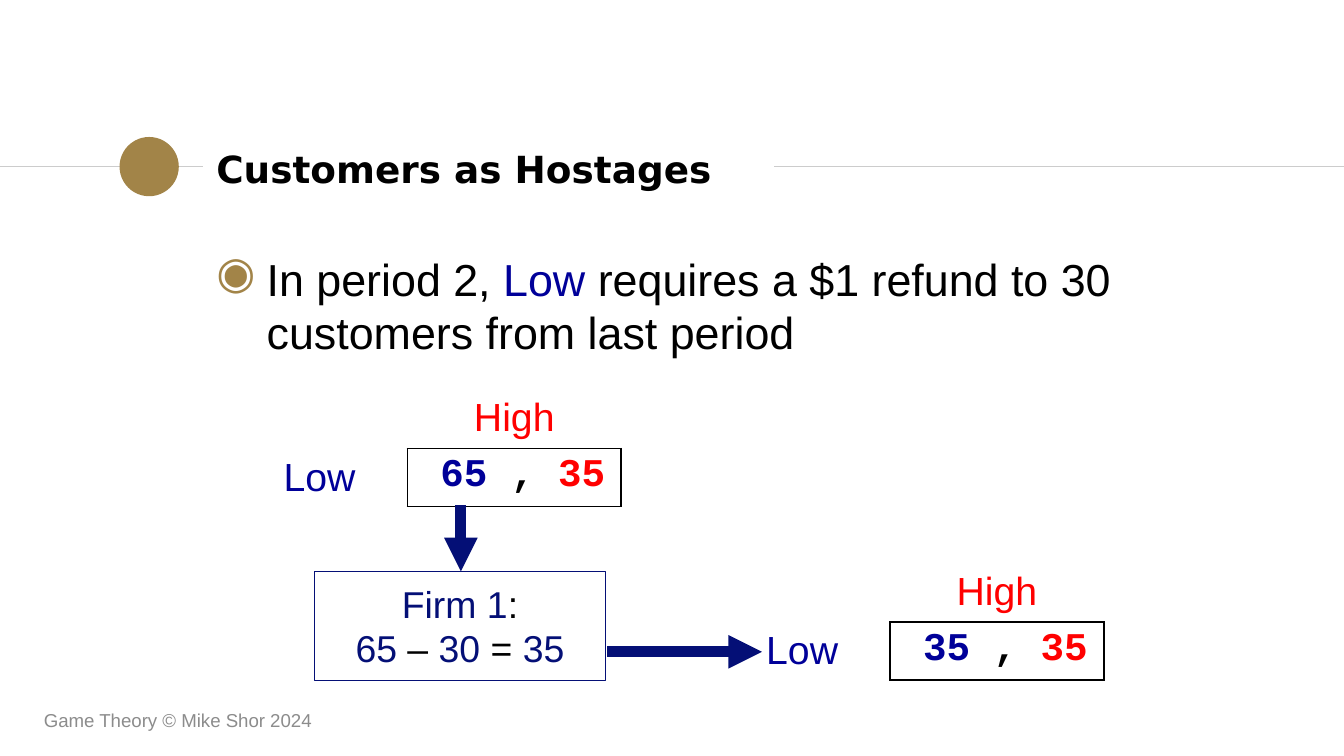
from pptx import Presentation
from pptx import util as u
from pptx.dml.color import RGBColor
from pptx.enum import shapes, text
from pptx.oxml import parse_xml
from pptx.oxml.ns import nsdecls

Cm, Pt = u.Cm, u.Pt
C = {"black": "000000", "gold": "A28448", "rule": "CCCCCC", "grey": "8C8C8C",
     "blue": "000099", "red": "FF0000", "navy": "040F76"}


def add_runs(p, parts, size, font="Arial", bold=False):
    for words, color in parts:
        r = p.add_run()
        r.text = words
        r.font.size, r.font.name, r.font.bold = Pt(size), font, bold
        r.font.color.rgb = RGBColor.from_string(C[color])


def add_line(x1, y1, x2, y2, color, width):
    ln = s.shapes.add_connector(shapes.MSO_CONNECTOR.STRAIGHT,
                                Cm(x1), Cm(y1), Cm(x2), Cm(y2))
    ln.line.color.rgb = RGBColor.from_string(C[color])
    ln.line.width = Pt(width)
    ln._element.spPr.append(parse_xml(f"<a:effectLst {nsdecls('a')}/>"))
    return ln


prs = Presentation()
prs.slide_width, prs.slide_height = Cm(25.4), Cm(14.29)
s = prs.slides.add_slide(prs.slide_layouts[6])

# Header rule and dot
for x1, x2 in ((0, 3.84), (14.63, 25.4)):
    add_line(x1, 3.15, x2, 3.15, "rule", 0.75)
sp = s.shapes.add_shape(shapes.MSO_SHAPE.OVAL, Cm(2.26), Cm(2.59), Cm(1.12), Cm(1.12))
sp.shadow.inherit = False
sp.fill.solid()
sp.fill.fore_color.rgb = RGBColor.from_string(C["gold"])
sp.line.fill.background()

# Title, body and footer
top, middle = text.MSO_ANCHOR.TOP, text.MSO_ANCHOR.MIDDLE
body = [("In period 2, ", "black"), ("Low", "blue"),
        (" requires a $1 refund to 30 customers from last period", "black")]
for box, anchor, inset, parts, size, font, bold in (
        ((3.84, 2.57, 10.77, 1.22), middle, 0.25,
         [("Customers as Hostages", "black")], 20, "DejaVu Sans", True),
        ((3.84, 4.5, 18.92, 8.64), top, 0.25, body, 24, "Arial", False),
        ((0.58, 13.23, 8.59, 0.76), middle, 0.13,
         [("Game Theory © Mike Shor 2024", "grey")], 10, "Arial", False)):
    tf = s.shapes.add_textbox(*map(Cm, box)).text_frame
    tf.word_wrap = True
    tf.vertical_anchor = anchor
    tf.margin_left = tf.margin_right = Cm(0.25)
    tf.margin_top = tf.margin_bottom = Cm(inset)
    p = tf.paragraphs[0]
    if parts is body:
        pPr = p._p.get_or_add_pPr()
        pPr.set("marL", str(Cm(0.95)))
        pPr.set("indent", str(-Cm(0.95)))
        pPr.append(parse_xml(f'<a:buClr {nsdecls("a")}><a:srgbClr val="{C["gold"]}"/></a:buClr>'))
        pPr.append(parse_xml(f'<a:buChar {nsdecls("a")} char="◉"/>'))
    add_runs(p, parts, size, font, bold)

# Payoff tables
borders = {(0, 2): "B", (1, 0): "R", (1, 2): "LRTB"}
for x, y, payoff in ((5.18, 7.39, "65"), (14.3, 10.67, "35")):
    t = s.shapes.add_table(2, 3, Cm(x), Cm(y), Cm(6.56), Cm(2.16)).table
    t.first_row = t.horz_banding = False
    for col, width in zip(t.columns, (0.46, 2.06, 4.04)):
        col.width = Cm(width)
    t.cell(1, 0).merge(t.cell(1, 1))
    for i in range(2):
        for j in range(3):
            cell = t.cell(i, j)
            cell.margin_left = cell.margin_right = Cm(0.18)
            cell.margin_top = cell.margin_bottom = Cm(0.1)
            for side in borders.get((i, j), ""):
                cell._tc.get_or_add_tcPr().append(parse_xml(
                    f'<a:ln{side} {nsdecls("a")} w="12700"><a:solidFill>'
                    f'<a:srgbClr val="{C["black"]}"/></a:solidFill></a:ln{side}>'))
            cell.fill.background()
    p = t.cell(0, 2).text_frame.paragraphs[0]
    p.alignment = text.PP_ALIGN.CENTER
    add_runs(p, [("High", "red")], 21)
    t.cell(1, 0).vertical_anchor = middle
    add_runs(t.cell(1, 0).text_frame.paragraphs[0], [("Low", "blue")], 21)
    add_runs(t.cell(1, 2).text_frame.paragraphs[0],
             [(" " + payoff, "blue"), (" , ", "black"), ("35", "red")],
             21, "Courier New", True)

# Arrows
for ends in ((8.71, 9.55, 8.71, 10.8), (11.48, 12.32, 14.4, 12.32)):
    ln = add_line(*ends, "navy", 6)
    ln.line._get_or_add_ln().append(parse_xml(f'<a:tailEnd {nsdecls("a")} type="triangle"/>'))

# Firm 1 calculation
sp = s.shapes.add_shape(shapes.MSO_SHAPE.RECTANGLE, Cm(5.94), Cm(10.8), Cm(5.51), Cm(2.06))
sp.shadow.inherit = False
sp.fill.background()
sp.line.color.rgb = RGBColor.from_string(C["navy"])
sp.line.width = Pt(0.75)
tf = sp.text_frame
tf.word_wrap = True
tf.vertical_anchor = top
tf.margin_left = tf.margin_right = tf.margin_bottom = 0
tf.margin_top = Cm(0.18)
firm = [("Firm 1", "navy"), (":", "black")]
result = [("65", "navy"), (" – ", "black"), ("30 ", "navy"), ("= ", "black"), ("35", "navy")]
for p, parts in ((tf.paragraphs[0], firm), (tf.add_paragraph(), result)):
    p.alignment = text.PP_ALIGN.CENTER
    add_runs(p, parts, 20)

prs.save("out.pptx")
